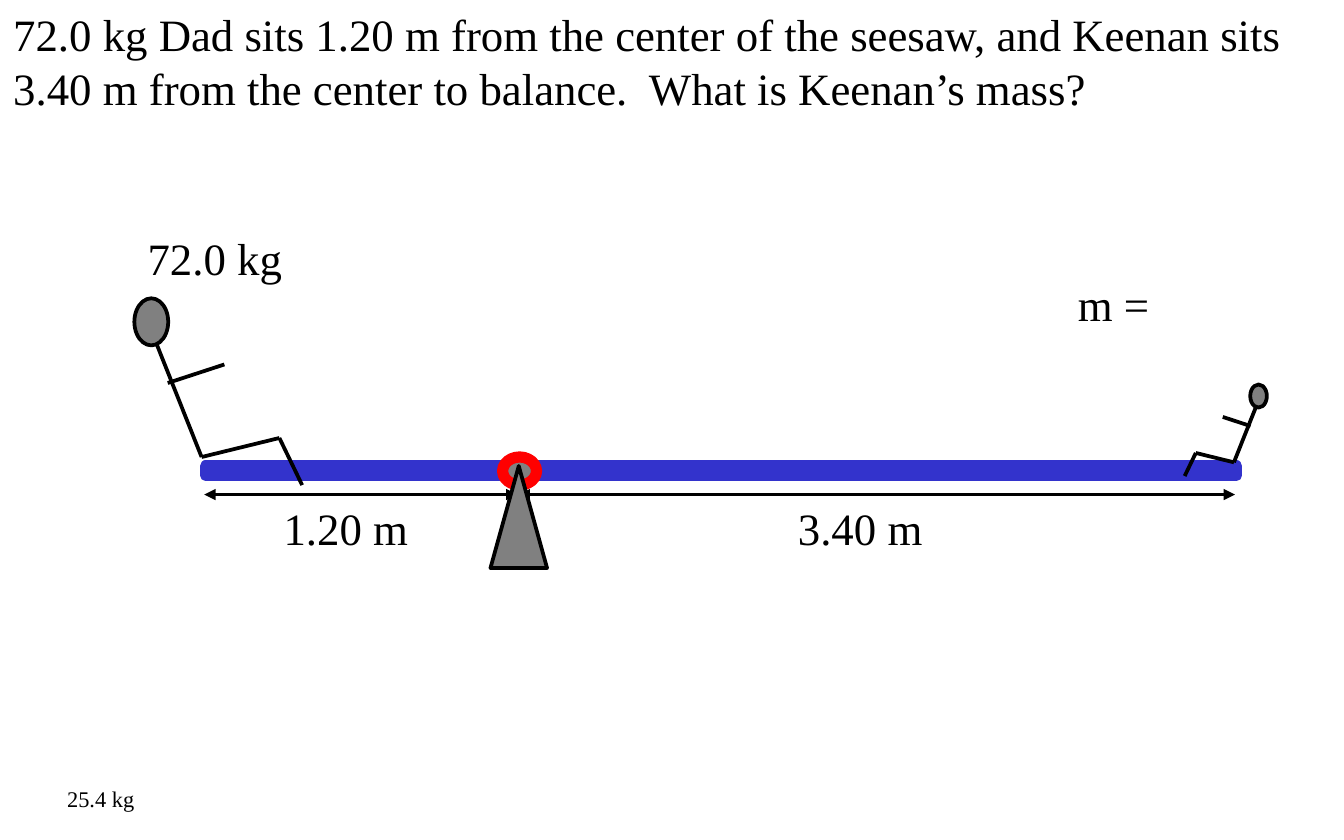
"""Build a slide with a seesaw balance problem."""
import lxml.etree
import pptx
import pptx.dml.color
import pptx.enum.shapes
import pptx.enum.text
import pptx.oxml.ns
import pptx.util

Cm = pptx.util.Cm
Pt = pptx.util.Pt
qn = pptx.oxml.ns.qn
Kind = pptx.enum.shapes.MSO_SHAPE
BLACK, GRAY, BLUE, RED = "000000", "808080", "3333CC", "FF0000"


def ink(fill, tone):
    fill.solid()
    fill.fore_color.rgb = pptx.dml.color.RGBColor.from_string(tone)


def form(home, kind, box, edge, width):
    shape = home.add_shape(kind, *map(Cm, box))
    shape.shadow.inherit = False
    ink(shape.fill, GRAY)
    ink(shape.line.fill, edge)
    shape.line.width = Pt(width)


deck = pptx.Presentation()
deck.slide_width, deck.slide_height = Cm(25.4), Cm(15.88)
slide = deck.slides.add_slide(deck.slide_layouts[6])
board = slide.shapes

form(board, Kind.RECTANGLE, (3.89, 8.81, 19.48, 0.18), BLUE, 6)
form(board, Kind.OVAL, (9.5, 8.64, 0.64, 0.53), RED, 6)

task = (
    "72.0 kg Dad sits 1.20 m from the center of the seesaw, and Keenan sits "
    "3.40 m from the center to balance.  What is Keenan’s mass?"
)
labels = [
    ("72.0 kg", (2.54, 4.24, 3.07, 1.27), 24, False),
    ("m =", (20.12, 5.11, 2.08, 1.27), 24, False),
    ("1.20 m", (5.11, 9.35, 2.9, 1.27), 24, False),
    ("3.40 m", (14.83, 9.35, 2.9, 1.27), 24, False),
    (task, (0, 0, 25.4, 2.31), 24, True),
    ("25.4 kg", (1.02, 14.71, 1.8, 0.76), 12, False),
]
for words, box, size, wrap in labels:
    frame = board.add_textbox(*map(Cm, box)).text_frame
    frame.word_wrap = wrap
    frame.auto_size = pptx.enum.text.MSO_AUTO_SIZE.SHAPE_TO_FIT_TEXT
    run = frame.paragraphs[0].add_run()
    run.text = words
    for name, value in {"name": "Times New Roman", "size": Pt(size)}.items():
        setattr(run.font, name, value)
    ink(run.font.fill, BLACK)

rods = [
    (board, (3.86, 9.35, 9.78, 9.35), True),
    (board, (9.8, 9.35, 23.34, 9.35), True),
]
limbs = [
    (0, 0, -0.84, -2.11),
    (0, 0, 1.47, -0.36),
    (1.9, 0.53, 1.47, -0.36),
    (-0.64, -1.4, 0.43, -1.75),
]
for left, top, scale, side in [(3.81, 8.64, 1, 1), (23.32, 8.74, 0.49, -1)]:
    body = board.add_group_shape().shapes
    wide, high = 0.64 * scale, 0.89 * scale
    mid = left - 0.95 * scale * side
    head = (mid - wide / 2, top - 3 * scale, wide, high)
    form(body, Kind.OVAL, head, BLACK, 2)
    for x1, y1, x2, y2 in limbs:
        turn = scale * side
        ends = (left + x1 * turn, top + y1 * scale,
                left + x2 * turn, top + y2 * scale)
        rods.append((body, ends, False))

for home, ends, tips in rods:
    rod = home.add_connector(
        pptx.enum.shapes.MSO_CONNECTOR.STRAIGHT, *map(Cm, ends))
    ink(rod.line.fill, BLACK)
    rod.line.width = Pt(2)
    props = rod.element.spPr
    if tips:
        for tip in ("a:headEnd", "a:tailEnd"):
            lxml.etree.SubElement(
                props.find(qn("a:ln")), qn(tip), type="triangle")
    lxml.etree.SubElement(props, qn("a:effectLst"))

form(board, Kind.ISOSCELES_TRIANGLE, (9.27, 8.81, 1.07, 1.93), BLACK, 2)

deck.save("out.pptx")
